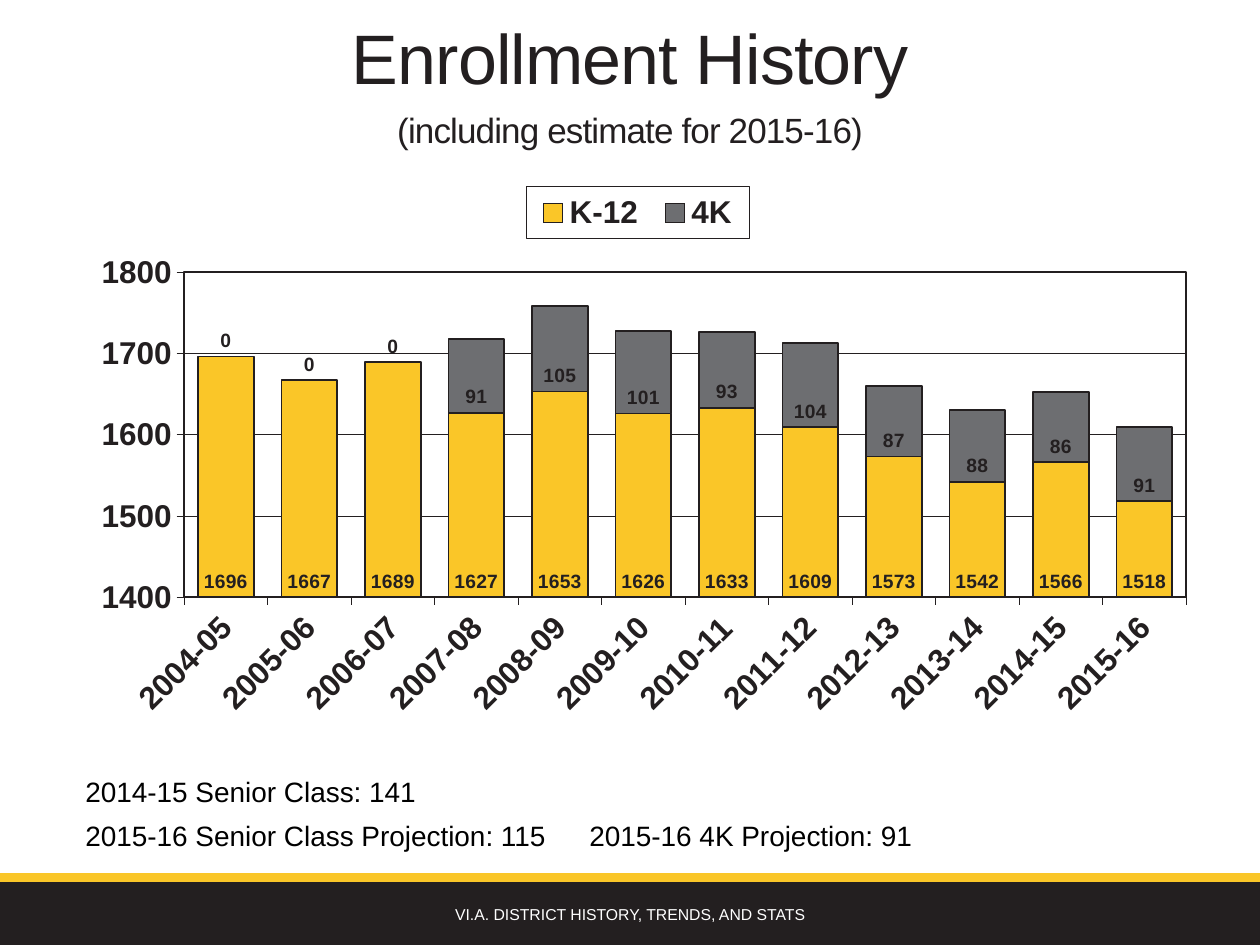
"""Build the enrollment history slide with its stacked column chart."""
from lxml import etree
from pptx import Presentation
from pptx import util as u
from pptx.chart.data import CategoryChartData
from pptx.dml.color import RGBColor
from pptx.enum import chart as ch, shapes, text
from pptx.oxml import parse_xml
from pptx.oxml.ns import nsdecls, qn

INK = RGBColor(0x23, 0x1F, 0x20)
GOLD = RGBColor(0xFA, 0xC6, 0x28)
GRAY = RGBColor(0x6D, 0x6E, 0x71)
WHITE = RGBColor(0xFF, 0xFF, 0xFF)
BLACK = RGBColor(0, 0, 0)


def style(font, size, color, bold=False):
    font.name, font.size, font.bold = "Arial", u.Pt(size), bold
    font.color.rgb = color


def layout(box, spot, inner=False):
    node = etree.Element(qn("c:layout"))
    man = etree.SubElement(node, qn("c:manualLayout"))
    pairs = [("layoutTarget", "inner")] if inner else []
    pairs += [("xMode", "edge"), ("yMode", "edge")] + list(zip("xywh", spot))
    for tag, val in pairs:
        etree.SubElement(man, qn("c:" + tag)).set("val", str(val))
    for old in box.findall(qn("c:layout")):
        box.remove(old)
    box.insert(0 if inner else 1, node)


deck = Presentation()
deck.slide_width, deck.slide_height = u.Cm(25.4), u.Cm(19.05)
slide = deck.slides.add_slide(deck.slide_layouts[5])

for top, high, color in [(17.78, 1.27, INK), (17.6, 0.18, GOLD)]:
    band = slide.shapes.add_shape(
        shapes.MSO_SHAPE.RECTANGLE, 0, u.Cm(top), u.Cm(25.4), u.Cm(high))
    band.shadow.inherit = False
    band.fill.solid()
    band.fill.fore_color.rgb = color
    band.line.fill.background()

title = slide.shapes.title
title.left, title.top = u.Cm(0), u.Cm(0.05)
title.width, title.height = u.Cm(25.4), u.Cm(3.12)
frame = title.text_frame
frame.text = "Enrollment History\n(including estimate for 2015-16)"
frame.vertical_anchor = text.MSO_ANCHOR.BOTTOM
frame.auto_size = text.MSO_AUTO_SIZE.NONE
for para, size in zip(frame.paragraphs, (40, 20)):
    para.alignment = text.PP_ALIGN.CENTER
    para.space_after = u.Pt(6)
    style(para.font, size, INK)
    para.runs[0].font._element.set("spc", "-50")

data = CategoryChartData()
data.categories = [f"{year}-{year % 100 + 1:02}" for year in range(2004, 2016)]
data.add_series("K-12", (1696, 1667, 1689, 1627, 1653, 1626,
                         1633, 1609, 1573, 1542, 1566, 1518))
data.add_series("4K", (0, 0, 0, 91, 105, 101, 93, 104, 87, 88, 86, 91))
chart = slide.shapes.add_chart(
    ch.XL_CHART_TYPE.COLUMN_STACKED, u.Cm(1.19), u.Cm(3.53),
    u.Cm(23.57), u.Cm(11.63), data).chart
style(chart.font, 18, INK, True)
chart.has_title = False
chart.has_legend = True
chart.legend.position = ch.XL_LEGEND_POSITION.TOP
chart.legend.include_in_layout = False

plot = chart.plots[0]
plot.gap_width, plot.overlap = 50, 100
plot.vary_by_categories = False
for bars, color in zip(plot.series, (GOLD, GRAY)):
    bars.format.fill.solid()
    bars.format.fill.fore_color.rgb = color
    bars.format.line.color.rgb = INK
    bars.format.line.width = u.Pt(1)
    tags = bars.data_labels
    tags.show_value = True
    tags.position = ch.XL_LABEL_POSITION.INSIDE_BASE
    style(tags.font, 11, INK, True)

cats, vals = chart.category_axis, chart.value_axis
vals.minimum_scale, vals.maximum_scale, vals.major_unit = 1400, 1800, 100
vals.has_major_gridlines = True
for axis in (cats, vals):
    axis.major_tick_mark = ch.XL_TICK_MARK.OUTSIDE
    style(axis.tick_labels.font, 18, INK, True)
for item in (cats, vals, vals.major_gridlines):
    item.format.line.color.rgb = INK
    item.format.line.width = u.Pt(0.25)
turn = cats._element.find(qn("c:txPr")).find(qn("a:bodyPr"))
turn.set("rot", "-2700000")
turn.set("vert", "horz")

area = chart._chartSpace.chart.plotArea
key = chart.legend._element
layout(area, (0.107, 0.168, 0.857, 0.564), True)
layout(key, (0.4, 0.02, 0.19, 0.09))
for box, width in ((area, 12700), (key, 3175)):
    edge = parse_xml(
        f'<c:spPr {nsdecls("c", "a")}><a:noFill/><a:ln w="{width}"><a:solidFill>'
        f'<a:srgbClr val="{INK}"/></a:solidFill></a:ln></c:spPr>')
    if box is key:
        key.find(qn("c:overlay")).addnext(edge)
    else:
        area.append(edge)

foot = slide.shapes.add_textbox(
    u.Cm(7.67), u.Cm(17.93), u.Cm(10.06), u.Cm(1.02)).text_frame
foot.word_wrap = True
foot.vertical_anchor = text.MSO_ANCHOR.MIDDLE
foot.text = "VI.A. DISTRICT HISTORY, TRENDS, AND STATS"
foot.paragraphs[0].alignment = text.PP_ALIGN.CENTER
style(foot.paragraphs[0].font, 9, WHITE)

note = slide.shapes.add_textbox(
    u.Cm(1.47), u.Cm(15.49), u.Cm(23.29), u.Cm(1.83)).text_frame
note.word_wrap = True
note.auto_size = text.MSO_AUTO_SIZE.SHAPE_TO_FIT_TEXT
note.text = ("2014-15 Senior Class: 141\n"
             "2015-16 Senior Class Projection: 115 \t2015-16 4K Projection: 91")
for para in note.paragraphs:
    para.space_before = u.Pt(6)
    style(para.font, 16, BLACK)

deck.save("out.pptx")
